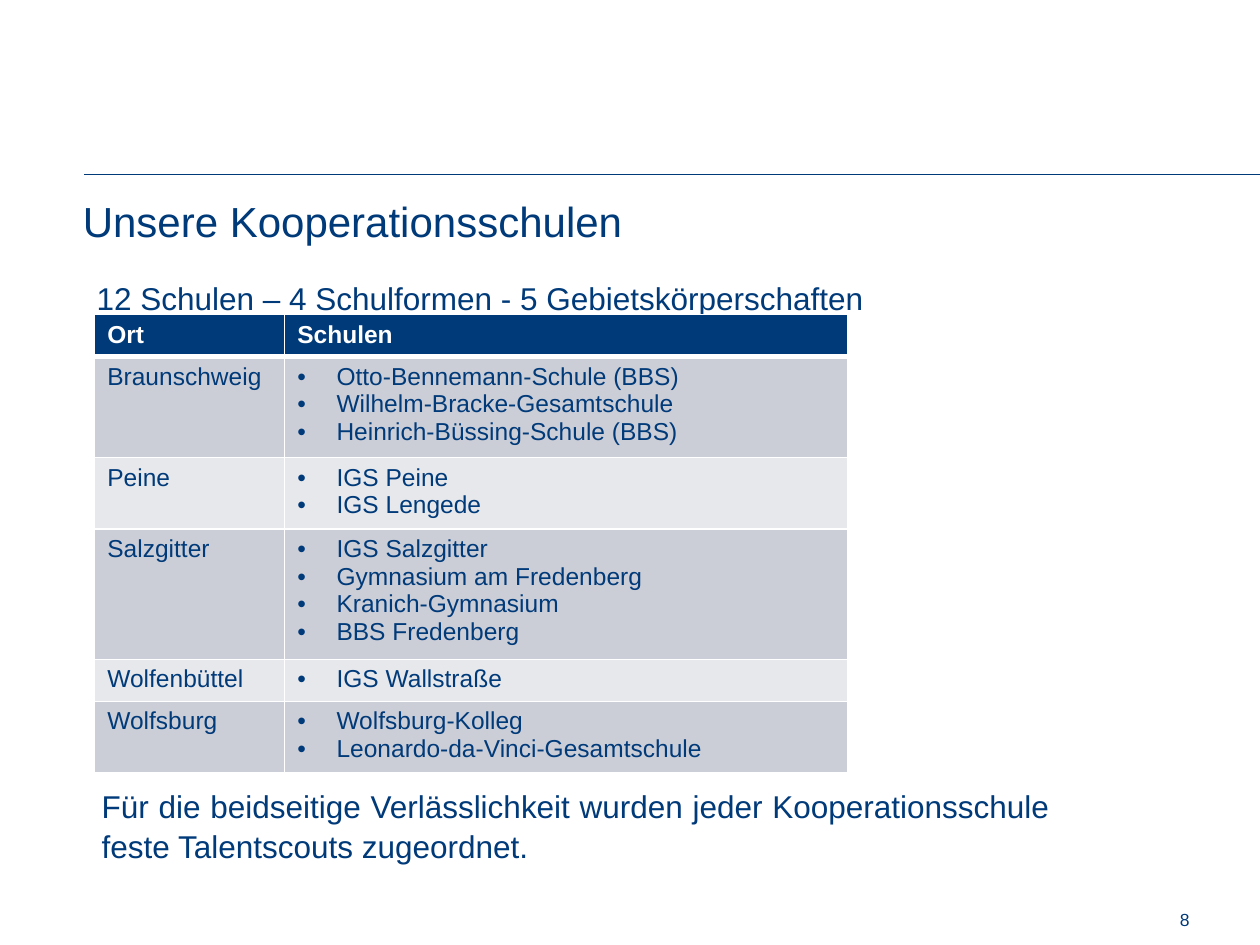
"""Build the slide listing the cooperating schools by town."""
from lxml import etree
from pptx import Presentation, util as u
from pptx.dml.color import RGBColor
from pptx.enum import shapes, text
from pptx.oxml import ns

NAVY, WHITE = "003A79", "FFFFFF"
BANDS = ["CCCED7", "E7E8EC"]


def rgb(value):
    return RGBColor.from_string(value)


def format_runs(tf, size, color=NAVY, bold=False):
    for p in tf.paragraphs:
        for r in p.runs:
            r.font.name = "Arial"
            r.font.size = u.Pt(size)
            r.font.bold = bold
            r.font.color.rgb = rgb(color)


prs = Presentation()
prs.slide_width, prs.slide_height = u.Cm(25.4), u.Cm(19.05)
s = prs.slides.add_slide(prs.slide_layouts[6])

rule = s.shapes.add_connector(shapes.MSO_CONNECTOR.STRAIGHT, u.Cm(1.7), u.Cm(3.52), u.Cm(25.4), u.Cm(3.52))
rule.line.color.rgb = rgb(NAVY)
rule.line.width = u.Pt(0.75)
etree.SubElement(rule._element.spPr, ns.qn("a:effectLst"))

left, right, justify = text.PP_ALIGN.LEFT, text.PP_ALIGN.RIGHT, text.PP_ALIGN.JUSTIFY
texts = [
    ("Unsere Kooperationsschulen", 1.42, 3.81, 22.81, 1.8, 24, left, 1),
    ("12 Schulen – 4 Schulformen - 5 Gebietskörperschaften", 1.7, 5.5, 22.81, 12.12, 18, left, 1),
    ("8", 22.5, 18.21, 1.73, 0.84, 10, right, 1),
    ("Für die beidseitige Verlässlichkeit wurden jeder Kooperationsschule feste Talentscouts zugeordnet.",
     1.8, 15.7, 19.61, 1.8, 18, justify, 1.05),
]
for words, x, y, w, h, size, align, spacing in texts:
    sp = s.shapes.add_textbox(u.Cm(x), u.Cm(y), u.Cm(w), u.Cm(h))
    tf = sp.text_frame
    tf.word_wrap = True
    tf.text = words
    tf.paragraphs[0].alignment = align
    tf.paragraphs[0].line_spacing = spacing
    format_runs(tf, size)

rows = [
    ("Ort", ["Schulen"], 0.79),
    ("Braunschweig", ["Otto-Bennemann-Schule (BBS)", "Wilhelm-Bracke-Gesamtschule",
                      "Heinrich-Büssing-Schule (BBS)"], 1.91),
    ("Peine", ["IGS Peine", "IGS Lengede"], 1.37),
    ("Salzgitter", ["IGS Salzgitter", "Gymnasium am Fredenberg", "Kranich-Gymnasium", "BBS Fredenberg"], 2.54),
    ("Wolfenbüttel", ["IGS Wallstraße"], 0.81),
    ("Wolfsburg", ["Wolfsburg-Kolleg", "Leonardo-da-Vinci-Gesamtschule"], 1.37),
]
widths = [3.83, 11.35]
table = s.shapes.add_table(len(rows), 2, u.Cm(1.91), u.Cm(6.34), u.Cm(sum(widths)),
                           u.Cm(sum(row[2] for row in rows))).table
for column, width in zip(table.columns, widths):
    column.width = u.Cm(width)

for i, (town, schools, height) in enumerate(rows):
    table.rows[i].height = u.Cm(height)
    for j, lines in enumerate([[town], schools]):
        cell = table.cell(i, j)
        tf = cell.text_frame
        tf.text = "\n".join(lines)
        format_runs(tf, 14, NAVY if i else WHITE, i == 0)
        if i and j:
            for p in tf.paragraphs:
                pPr = p._p.get_or_add_pPr()
                pPr.set("marL", str(u.Cm(0.79)))
                pPr.set("indent", str(-u.Cm(0.79)))
                etree.SubElement(pPr, ns.qn("a:buFont"), typeface="Arial")
                etree.SubElement(pPr, ns.qn("a:buChar"), char="•")
        tcPr = cell._tc.get_or_add_tcPr()
        for side in "LRTB":
            thick = (i, side) in [(0, "B"), (1, "T")]
            ln = etree.SubElement(tcPr, ns.qn("a:ln" + side), w=str(u.Pt(3 if thick else 1)))
            fill = etree.SubElement(ln, ns.qn("a:solidFill"))
            etree.SubElement(fill, ns.qn("a:srgbClr"), val=WHITE)
        cell.fill.solid()
        cell.fill.fore_color.rgb = rgb(BANDS[(i - 1) % 2] if i else NAVY)

prs.save("out.pptx")
